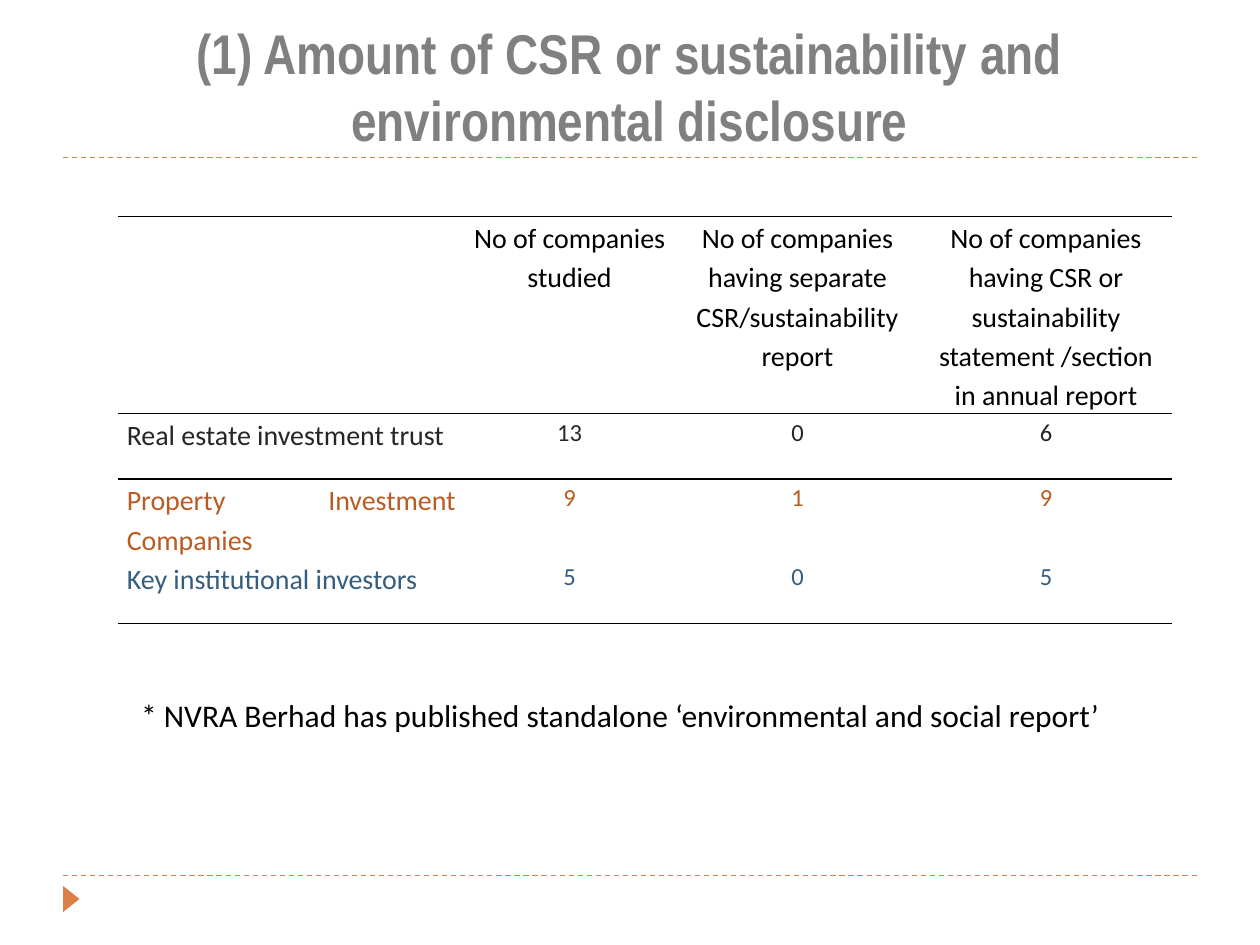
"""Build a slide with a ruled table of CSR disclosure counts."""
from lxml import etree
from pptx import Presentation
from pptx.dml.color import RGBColor
from pptx.enum import dml, shapes, text
from pptx.oxml import parse_xml
from pptx.oxml.ns import nsdecls, qn
from pptx.util import Pt

ACCENT, BLACK = "DD8047", "000000"
NO_STYLE = "{2D5ABB26-0587-4C30-8999-92F81FD0307C}"
COLUMN_WIDTHS = (198, 120, 140.5, 143.5)
ROW_HEIGHTS = (112.5, 37.5, 45, 37.5)
HEADERS = (
    "",
    "No of companies studied",
    "No of companies having separate CSR/sustainability report",
    "No of companies having CSR or sustainability statement /section in annual report",
)
GROUPS = (
    ("262626", ("Real estate investment trust", "13", "0", "6")),
    ("B95B22", ("Property Investment Companies", "9", "1", "9")),
    ("355D7E", ("Key institutional investors", "5", "0", "5")),
)


def color(value):
    """Return the colour for a hex string."""
    return RGBColor.from_string(value)


def write(frame, words, size=16, font="Calibri", fill=BLACK, bold=False,
          align=text.PP_ALIGN.LEFT, spacing=None, after=None):
    """Put formatted words in the first paragraph of a text frame."""
    para = frame.paragraphs[0]
    para.alignment = align
    para.line_spacing = spacing
    if after is not None:
        para.space_after = Pt(after)
    span = para.add_run()
    span.text = words
    span.font.size = Pt(size)
    span.font.name = font
    span.font.bold = bold
    span.font.color.rgb = color(fill)


def add_text(page, left, top, width, height, words, **style):
    """Add a wrapping text box."""
    box = page.shapes.add_textbox(Pt(left), Pt(top), Pt(width), Pt(height))
    box.text_frame.word_wrap = True
    box.text_frame.vertical_anchor = text.MSO_ANCHOR.MIDDLE
    write(box.text_frame, words, **style)


def add_dashed_rule(page, top):
    """Add a dashed horizontal rule between the page margins."""
    rule = page.shapes.add_connector(
        shapes.MSO_CONNECTOR.STRAIGHT, Pt(36), Pt(top), Pt(684), Pt(top))
    rule.line.color.rgb = color(ACCENT)
    rule.line.width = Pt(0.75)
    rule.line.dash_style = dml.MSO_LINE.DASH
    etree.SubElement(rule._element.spPr, qn("a:effectLst"))


def add_page_marker(page):
    """Add the triangle that points right at the foot of the page."""
    marker = page.shapes.add_shape(
        shapes.MSO_SHAPE.ISOSCELES_TRIANGLE, Pt(33.2), Pt(509), Pt(15), Pt(9.4))
    marker.rotation = 90
    marker.shadow.inherit = False
    marker.fill.solid()
    marker.fill.fore_color.rgb = color(ACCENT)
    marker.line.fill.background()


def set_borders(cell, sides):
    """Draw a thin black border on the given sides, in schema order."""
    properties = cell._tc.get_or_add_tcPr()
    for index, side in enumerate(sides):
        properties.insert(index, parse_xml(
            f'<a:ln{side} {nsdecls("a")} w="{Pt(1)}"><a:solidFill>'
            f'<a:srgbClr val="{BLACK}"/></a:solidFill></a:ln{side}>'))


def fill_cell(cell, words, sides, **style):
    """Format one table cell and write its words."""
    cell.margin_left = cell.margin_right = Pt(5)
    cell.margin_top = cell.margin_bottom = 0
    cell.fill.background()
    set_borders(cell, sides)
    if words:
        write(cell.text_frame, words, spacing=1.15, **style)


def add_disclosure_table(page):
    """Add the table of company groups."""
    table = page.shapes.add_table(
        len(ROW_HEIGHTS), len(COLUMN_WIDTHS), Pt(67.5), Pt(123.8),
        Pt(sum(COLUMN_WIDTHS)), Pt(sum(ROW_HEIGHTS))).table
    table.first_row = table.horz_banding = False
    table._tbl.tblPr.find(qn("a:tableStyleId")).text = NO_STYLE
    for column, width in zip(table.columns, COLUMN_WIDTHS):
        column.width = Pt(width)
    for row, height in zip(table.rows, ROW_HEIGHTS):
        row.height = Pt(height)

    for column, words in enumerate(HEADERS):
        fill_cell(table.cell(0, column), words, "TB", align=text.PP_ALIGN.CENTER)
    for row, (fill, values) in enumerate(GROUPS, 1):
        sides = {1: "T", len(GROUPS): "B"}.get(row, "")
        for column, words in enumerate(values):
            label = column == 0
            fill_cell(table.cell(row, column), words, sides, fill=fill, after=6,
                      size=16 if label else 14,
                      align=text.PP_ALIGN.JUSTIFY if label else text.PP_ALIGN.CENTER)


def main():
    """Build and save the slide."""
    deck = Presentation()
    deck.slide_width, deck.slide_height = Pt(720), Pt(540)
    page = deck.slides.add_slide(deck.slide_layouts[6])
    for top in (500.4, 90):
        add_dashed_rule(page, top)
    add_page_marker(page)
    add_text(page, 36, 4, 648, 90,
             "(1) Amount of CSR or sustainability and environmental disclosure",
             size=32, font="Arial Narrow", fill="808080", bold=True,
             align=text.PP_ALIGN.CENTER)
    add_disclosure_table(page)
    add_text(page, 73.5, 394, 580, 29,
             "* NVRA Berhad has published standalone ‘environmental and social report’",
             size=18)
    deck.save("out.pptx")


if __name__ == "__main__":
    main()
